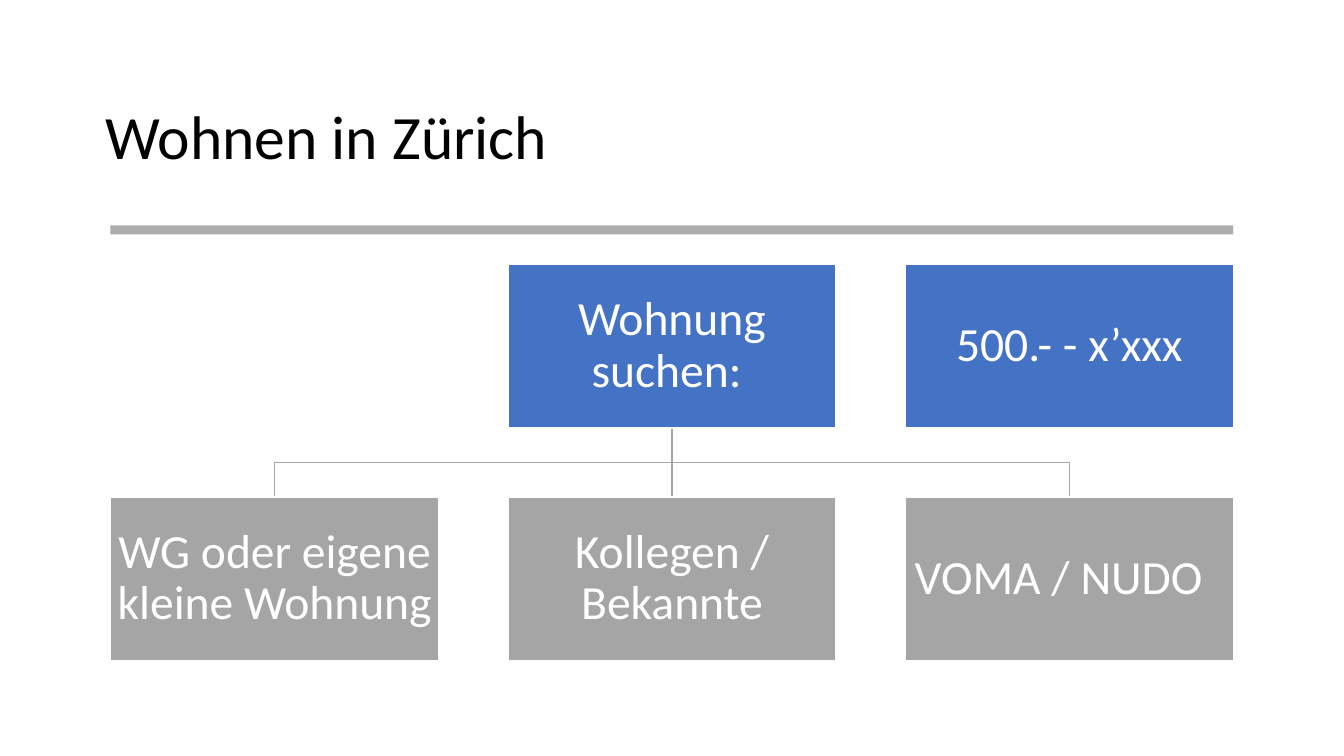
from lxml.etree import SubElement
from pptx import Presentation
from pptx.dml.color import RGBColor
from pptx.enum.shapes import MSO_CONNECTOR, MSO_SHAPE
from pptx.enum.text import MSO_ANCHOR, PP_ALIGN
from pptx.oxml.ns import qn
from pptx.util import Pt

COLORS = {
    "title": "000000",
    "rule": "808080",
    "top": "4472C4",
    "branch": "A5A5A5",
    "white": "FFFFFF",
}
FONT = "Calibri"
GAP = 49
TOP_ROW = [None, "Wohnung suchen: ", "500.- - x’xxx"]
BRANCH_ROW = ["WG oder eigene kleine Wohnung", "Kollegen / Bekannte", "VOMA / NUDO  "]


def color(name):
    return RGBColor.from_string(COLORS[name])


def write(frame, text, size, color_name, align):
    frame.word_wrap = True
    frame.vertical_anchor = MSO_ANCHOR.MIDDLE
    paragraph = frame.paragraphs[0]
    paragraph.text = text
    paragraph.alignment = align
    paragraph.line_spacing = 0.9
    paragraph.font.name = FONT
    paragraph.font.size = Pt(size)
    paragraph.font.color.rgb = color(color_name)


def add_title(slide, left, top, width, height):
    box = slide.shapes.add_textbox(Pt(left), Pt(top), Pt(width), Pt(height))
    write(box.text_frame, "Wohnen in Zürich", 44, "title", PP_ALIGN.LEFT)


def add_rectangle(slide, left, top, width, height, fill):
    shape = slide.shapes.add_shape(
        MSO_SHAPE.RECTANGLE, Pt(left), Pt(top), Pt(width), Pt(height))
    shape.shadow.inherit = False
    shape.fill.solid()
    shape.fill.fore_color.rgb = color(fill)
    return shape


def add_rule(slide, left, top, width, height):
    """Draw the translucent bar below the title."""
    rule = add_rectangle(slide, left, top, width, height, "rule")
    rule.line.fill.background()
    fill = rule._element.spPr.find(qn("a:solidFill"))
    SubElement(fill[0], qn("a:alpha"), val="65000")


def add_node(slide, left, top, width, height, fill, text):
    node = add_rectangle(slide, left, top, width, height, fill)
    node.line.color.rgb = color("white")
    node.line.width = Pt(1.5)
    frame = node.text_frame
    frame.margin_left = frame.margin_right = Pt(1.5)
    frame.margin_top = frame.margin_bottom = Pt(1.5)
    write(frame, text, 34, "white", PP_ALIGN.CENTER)


def style_branch(line):
    line.color.rgb = color("branch")
    line.width = Pt(1)


def add_elbow(slide, start_x, end_x, top, bottom):
    middle = (top + bottom) / 2
    builder = slide.shapes.build_freeform(Pt(start_x), Pt(top))
    builder.add_line_segments(
        [(Pt(x), Pt(y)) for x, y in
         [(start_x, middle), (end_x, middle), (end_x, bottom)]],
        close=False)
    elbow = builder.convert_to_shape()
    elbow.shadow.inherit = False
    elbow.fill.background()
    style_branch(elbow.line)


def add_stem(slide, x, top, bottom):
    stem = slide.shapes.add_connector(
        MSO_CONNECTOR.STRAIGHT, Pt(x), Pt(top), Pt(x), Pt(bottom))
    style_branch(stem.line)
    SubElement(stem._element.spPr, qn("a:effectLst"))


def add_tree(slide, left, top, width, height):
    """Draw two rows of nodes, the middle top one branching to the lower row."""
    node_width = (width - 2 * GAP) / 3
    node_height = (height - GAP) / 2
    lefts = [left + column * (node_width + GAP) for column in range(3)]
    first, middle, last = [x + node_width / 2 for x in lefts]
    branch_top = top + node_height
    branch_bottom = branch_top + GAP

    add_elbow(slide, middle, last, branch_top, branch_bottom)
    add_stem(slide, middle, branch_top, branch_bottom)
    add_elbow(slide, middle, first, branch_top, branch_bottom)

    for row_top, fill, texts in [(top, "top", TOP_ROW),
                                 (branch_bottom, "branch", BRANCH_ROW)]:
        for node_left, text in zip(lefts, texts):
            if text:
                add_node(slide, node_left, row_top, node_width, node_height, fill, text)


def main():
    presentation = Presentation()
    presentation.slide_width = Pt(960)
    presentation.slide_height = Pt(540)
    slide = presentation.slides.add_slide(presentation.slide_layouts[6])
    add_title(slide, 68.4, 47.5, 823, 104.4)
    add_rule(slide, 78.8, 161, 802, 6.5)
    add_tree(slide, 78.8, 188.6, 802.4, 283.5)
    presentation.save("out.pptx")


if __name__ == "__main__":
    main()
